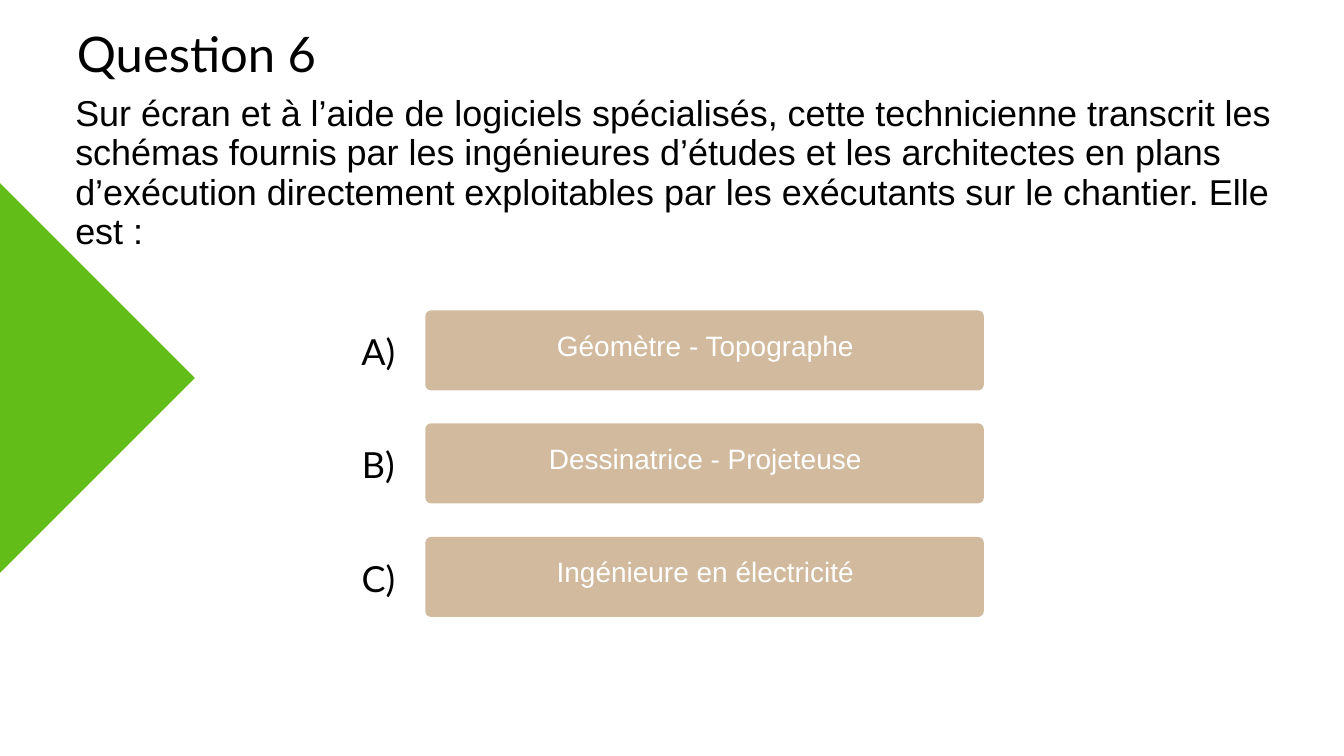
from pptx import Presentation
from pptx import util as u
from pptx.dml import color
from pptx.enum import shapes, text

SCALE = 9144
BLACK, WHITE, GREEN, SAND = "000000", "FFFFFF", "62BD19", "D1BA9D"
LEFT, MID = text.PP_ALIGN.LEFT, text.PP_ALIGN.CENTER

HEAD = {"name": "Lato", "size": 52.5, "ink": BLACK, "lead": 73.5, "align": MID}
BODY = {"name": "Arial", "size": 38.5, "ink": BLACK, "lead": 42, "align": LEFT}
MARK = {"name": "Lato", "size": 38.5, "ink": BLACK, "lead": 53.9, "align": MID}
REPLY = {"name": "Arial", "size": 30, "ink": WHITE, "lead": 32.7, "align": MID}

ASK = (
    "Sur écran et à l’aide de logiciels spécialisés, cette technicienne "
    "transcrit les schémas fournis par les ingénieures d’études et les "
    "architectes en plans d’exécution directement exploitables par les "
    "exécutants sur le chantier. Elle est :"
)
REPLIES = {
    "A)": "Géomètre - Topographe",
    "B)": "Dessinatrice - Projeteuse",
    "C)": "Ingénieure en électricité",
}


def px(*nums):
    return [u.Emu(n * SCALE) for n in nums]


def rgb(code):
    return color.RGBColor.from_string(code)


def put(item, vals):
    for key, val in vals.items():
        setattr(item, key, val)


class Quiz:
    def __init__(self, deck):
        self.slide = deck.slides.add_slide(deck.slide_layouts[5])

    def fill_in(self, shape, words, style):
        frame = shape.text_frame
        put(frame, {
            "margin_left": 0, "margin_top": 0,
            "margin_right": 0, "margin_bottom": 0,
            "word_wrap": True, "auto_size": text.MSO_AUTO_SIZE.NONE,
            "vertical_anchor": text.MSO_ANCHOR.TOP,
        })
        para = frame.paragraphs[0]
        put(para, {
            "alignment": style["align"], "line_spacing": u.Pt(style["lead"]),
            "space_before": u.Pt(0), "space_after": u.Pt(0),
        })
        run = para.add_run()
        run.text = words
        put(run.font, {"name": style["name"], "size": u.Pt(style["size"])})
        run.font.color.rgb = rgb(style["ink"])

    def title(self, words, box, style):
        head = self.slide.shapes.title
        put(head, dict(zip(("left", "top", "width", "height"), px(*box))))
        self.fill_in(head, words, style)

    def label(self, words, box, style):
        self.fill_in(self.slide.shapes.add_textbox(*px(*box)), words, style)

    def shape(self, kind, box, fill):
        item = self.slide.shapes.add_shape(kind, *px(*box))
        item.shadow.inherit = False
        item.fill.solid()
        item.fill.fore_color.rgb = rgb(fill)
        item.line.fill.background()
        return item

    def card(self, box, fill):
        item = self.shape(shapes.MSO_SHAPE.ROUNDED_RECTANGLE, box, fill)
        item.adjustments[0] = 0.07


def main():
    deck = Presentation()
    deck.slide_width, deck.slide_height = px(2000, 1125)
    quiz = Quiz(deck)
    quiz.shape(shapes.MSO_SHAPE.DIAMOND, (-293, 271, 583, 583), GREEN)
    quiz.title("Question 6", (112, 20, 361, 109), HEAD)
    quiz.label(ASK, (112, 141, 1828, 239), BODY)
    for row, (mark, reply) in enumerate(REPLIES.items()):
        top = 462 + row * 337 // 2
        quiz.card((633, top, 831, 119), SAND)
        quiz.label(mark, (535, top + 18, 56, 80), MARK)
        quiz.label(reply, (680, top + 31, 739, 52), REPLY)
    deck.save("out.pptx")


if __name__ == "__main__":
    main()
